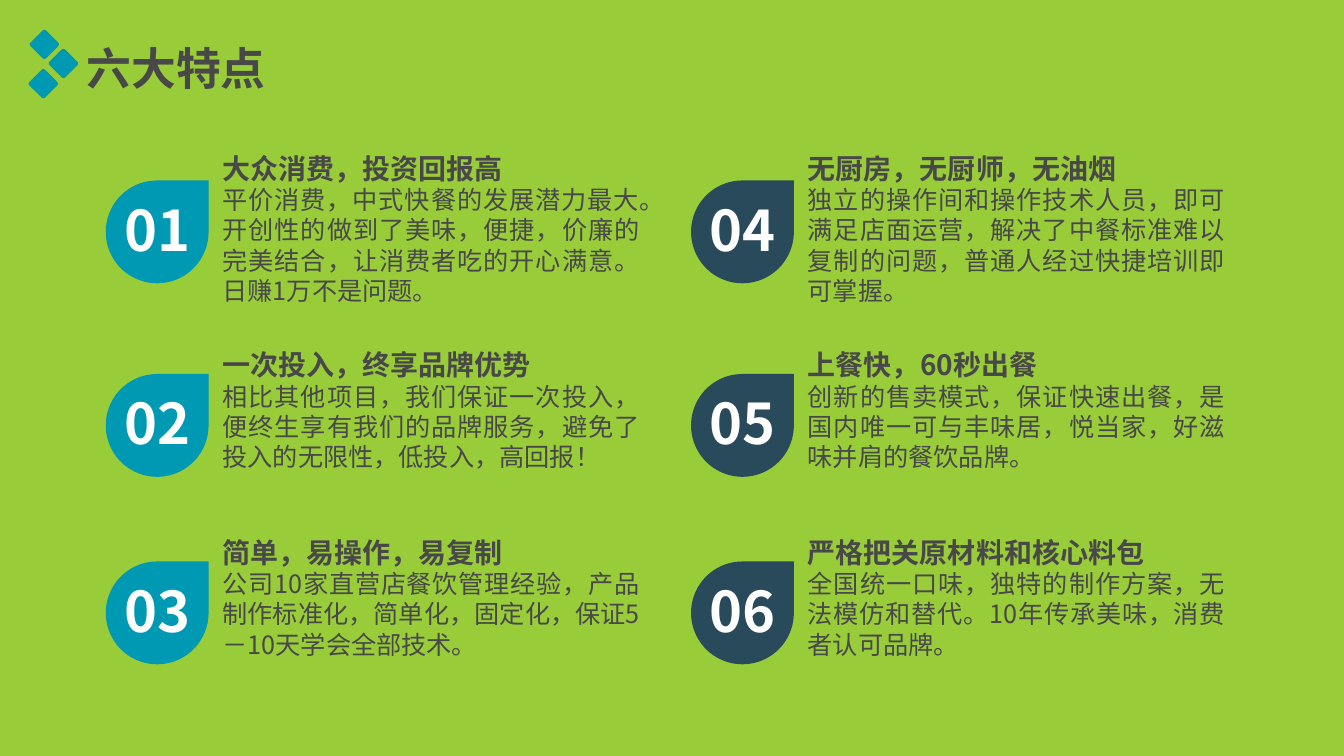
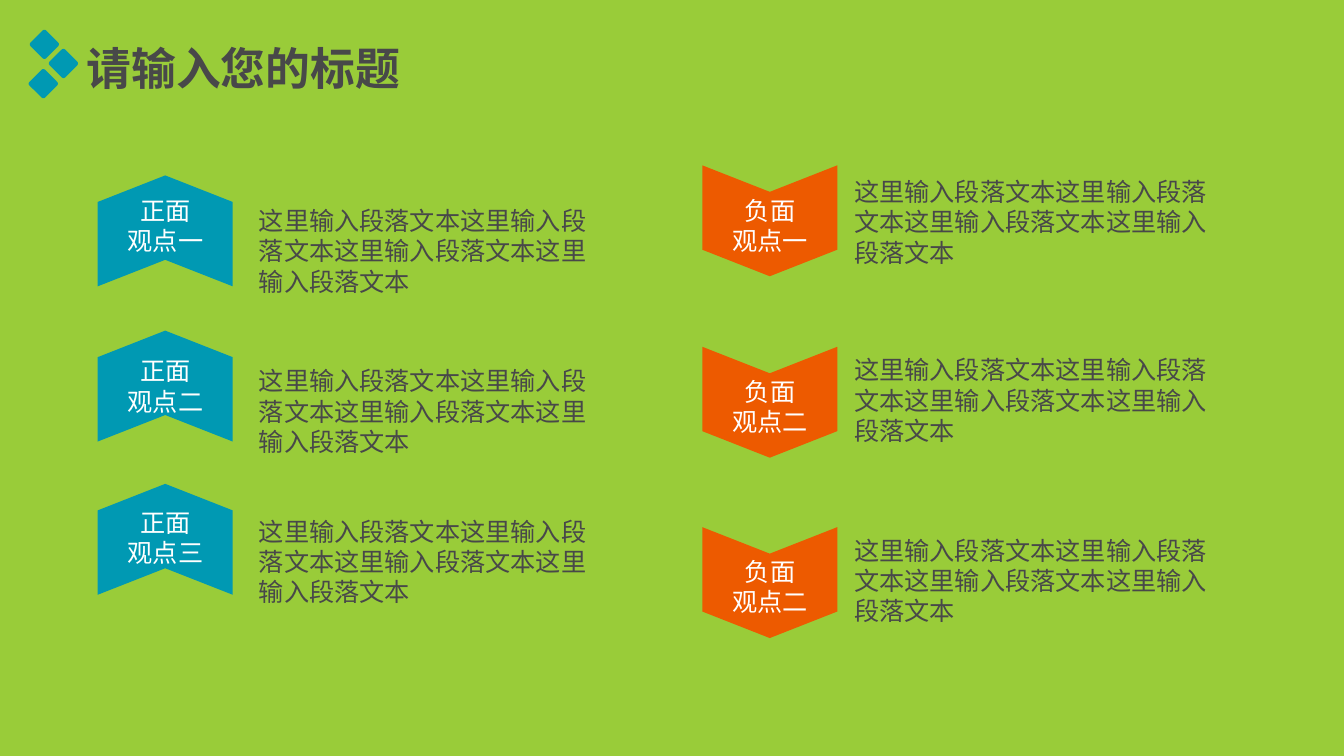
from dataclasses import dataclass

import pptx
import pptx.dml.color
import pptx.enum.shapes
import pptx.enum.text
import pptx.oxml.ns
import pptx.util
from lxml import etree

MSO = pptx.enum.shapes.MSO_SHAPE
ALIGN = pptx.enum.text.PP_ALIGN


@dataclass(frozen=True)
class Theme:
    font: str = "Noto Sans CJK SC"
    back: str = "99CC39"
    ink: str = "484849"
    white: str = "FFFFFF"
    teal: str = "0099B3"
    navy: str = "294A5A"
    orange: str = "ED5A00"
    title: int = 32
    number: int = 40
    heading: int = 20
    body: int = 18


T = Theme()
FORMATS = {
    "title": dict(size=T.title, color=T.ink, bold=True, align=ALIGN.LEFT),
    "number": dict(size=T.number, color=T.white, bold=True, align=ALIGN.CENTER),
    "heading": dict(size=T.heading, color=T.ink, bold=True, align=ALIGN.JUSTIFY),
    "feature": dict(size=T.body, color=T.ink, bold=False, align=ALIGN.JUSTIFY),
    "label": dict(size=T.body, color=T.white, bold=False, align=ALIGN.CENTER),
    "body": dict(size=T.body, color=T.ink, bold=False, align=ALIGN.LEFT),
}


def rgb(color):
    return pptx.dml.color.RGBColor.from_string(color)


class Deck:
    """Draws on a grid of 100 columns by 100 rows."""

    def __init__(self):
        self.prs = pptx.Presentation()
        self.prs.slide_width = pptx.util.Inches(13.34)
        self.prs.slide_height = pptx.util.Inches(7.5)
        self.s = None

    def grid(self, col, row, cols, rows):
        w, h = self.prs.slide_width / 100, self.prs.slide_height / 100
        return [round(v) for v in (col * w, row * h, cols * w, rows * h)]

    def slide(self, title):
        self.s = self.prs.slides.add_slide(self.prs.slide_layouts[6])
        fill = self.s.background.fill
        fill.solid()
        fill.fore_color.rgb = rgb(T.back)
        self.text("title", [title], 5.7, 4.67, 49, 8.53)
        side, height = 1.65, 2.93
        for col, row in ((3.3, 5.87), (4.72, 8.4), (3.22, 11.07)):
            self.shape(MSO.ROUNDED_RECTANGLE, T.teal, col - side / 2,
                       row - height / 2, side, height, turn=45, adj=0.11)

    def shape(self, kind, color, col, row, cols, rows, turn=0, adj=None):
        sp = self.s.shapes.add_shape(kind, *self.grid(col, row, cols, rows))
        sp.shadow.inherit = False
        sp.fill.solid()
        sp.fill.fore_color.rgb = rgb(color)
        sp.line.fill.background()
        sp.rotation = turn
        if adj is not None:
            sp.adjustments[0] = adj

    def text(self, style, lines, col, row, cols, rows, wrap=True):
        look = FORMATS[style]
        sp = self.s.shapes.add_textbox(*self.grid(col, row, cols, rows))
        tf = sp.text_frame
        tf.word_wrap = wrap
        tf.auto_size = pptx.enum.text.MSO_AUTO_SIZE.SHAPE_TO_FIT_TEXT
        for i, line in enumerate(lines):
            p = tf.add_paragraph() if i else tf.paragraphs[0]
            p.alignment = look["align"]
            r = p.add_run()
            r.text = line
            values = dict(name=T.font, size=pptx.util.Pt(look["size"]), bold=look["bold"])
            for name, value in values.items():
                setattr(r.font, name, value)
            r.font.color.rgb = rgb(look["color"])
            ea = etree.SubElement(r.font._element, pptx.oxml.ns.qn("a:ea"))
            ea.set("typeface", T.font)

    def feature(self, number, color, col, badge_row, text_row, heading, body):
        self.shape(MSO.TEAR, color, col, badge_row, 7.65, 13.6)
        self.text("number", [f"{number:02}"], col - 1.05, badge_row + 1.33, 9.75, 10.27)
        self.text("heading", [heading], col + 7.95, text_row, 27.51, 5.87)
        self.text("feature", [body], col + 7.95, text_row + 4.4, 32.53, 13.47)

    def opinion(self, side, rows, label):
        """Draws a chevron, its label and its paragraph; rows gives their tops."""
        chevron_row, label_row, text_row = rows
        self.shape(MSO.CHEVRON, side["color"], side["col"], chevron_row, 8.25, 17.87,
                   turn=side["turn"], adj=0.239)
        self.text("label", label, side["col"] + 0.55, label_row, 7.2, 9.47, wrap=False)
        self.text("body", ["这里输入段落文本" * 4], side["text_col"], text_row,
                  side["text_cols"], 13.47)


FEATURES = [
    ("大众消费，投资回报高",
     "平价消费，中式快餐的发展潜力最大。开创性的做到了美味，便捷，价廉的完美结合，"
     "让消费者吃的开心满意。日赚1万不是问题。"),
    ("一次投入，终享品牌优势",
     "相比其他项目，我们保证一次投入，便终生享有我们的品牌服务，避免了投入的无限性，"
     "低投入，高回报！"),
    ("简单，易操作，易复制",
     "公司10家直营店餐饮管理经验，产品制作标准化，简单化，固定化，保证5－10天学会全部技术。"),
    ("无厨房，无厨师，无油烟",
     "独立的操作间和操作技术人员，即可满足店面运营，解决了中餐标准难以复制的问题，"
     "普通人经过快捷培训即可掌握。"),
    ("上餐快，60秒出餐",
     "创新的售卖模式，保证快速出餐，是国内唯一可与丰味居，悦当家，好滋味并肩的餐饮品牌。"),
    ("严格把关原材料和核心料包",
     "全国统一口味，独特的制作方案，无法模仿和替代。10年传承美味，消费者认可品牌。"),
]
FEATURE_COLUMNS = [(7.87, T.teal), (51.42, T.navy)]
FEATURE_ROWS = [(23.87, 19.33), (49.47, 45.33), (74.27, 70.13)]

OPINIONS = [
    (dict(color=T.teal, col=8.17, turn=270, text_col=18.52, text_cols=26.76), "正面",
     [("观点一", (21.6, 25.2, 26.53)),
      ("观点二", (42.13, 46.4, 47.73)),
      ("观点三", (62.4, 66.4, 67.6))]),
    (dict(color=T.orange, col=53.15, turn=90, text_col=62.82, text_cols=28.49), "负面",
     [("观点一", (20.27, 25.2, 22.67)),
      ("观点二", (44.27, 49.07, 46.27)),
      ("观点二", (68.13, 72.93, 70.13))]),
]


def main():
    deck = Deck()
    deck.slide("六大特点")
    for i, (heading, body) in enumerate(FEATURES):
        col, color = FEATURE_COLUMNS[i // 3]
        badge_row, text_row = FEATURE_ROWS[i % 3]
        deck.feature(i + 1, color, col, badge_row, text_row, heading, body)

    deck.slide("请输入您的标题")
    for side, stance, points in OPINIONS:
        for point, rows in points:
            deck.opinion(side, rows, [stance, point])
    deck.prs.save("out.pptx")


if __name__ == "__main__":
    main()
